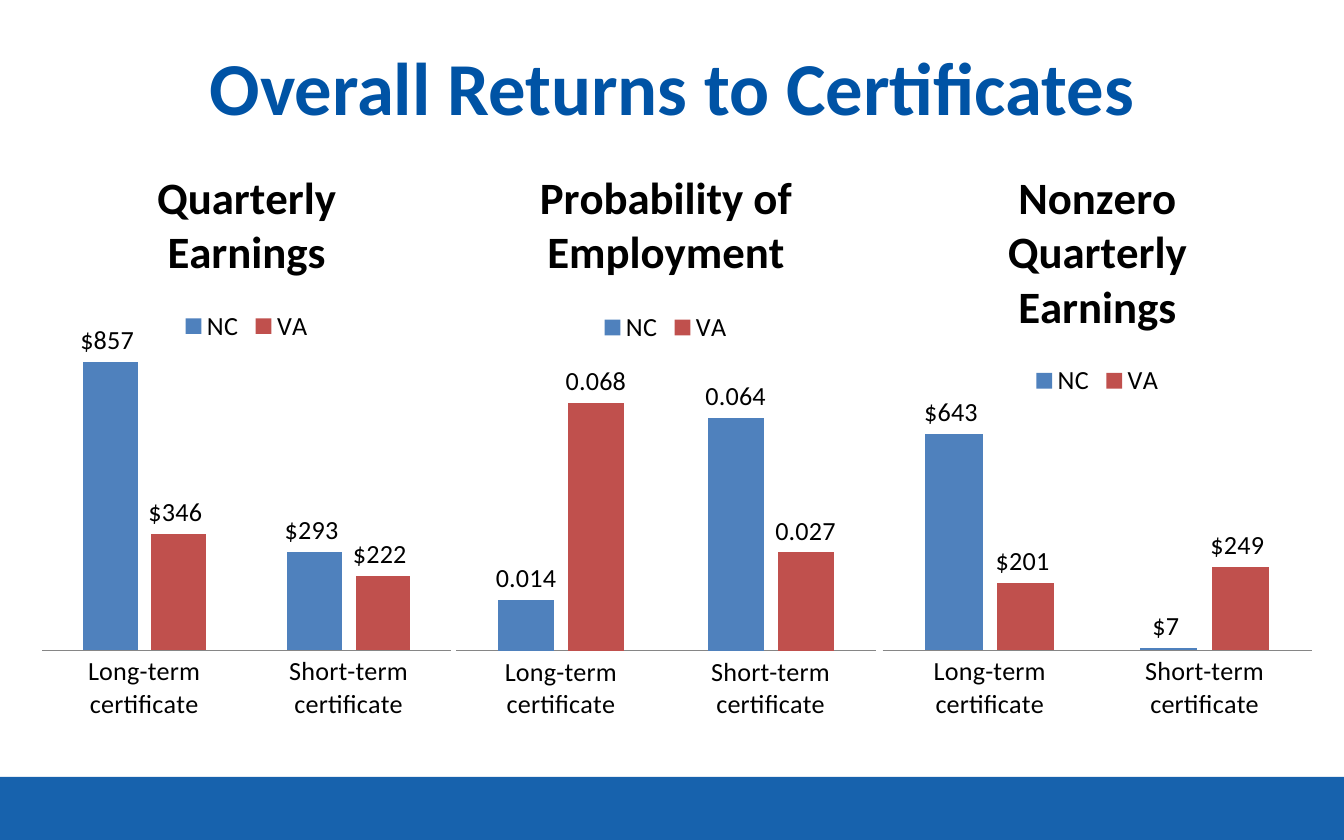
from dataclasses import dataclass
from typing import Optional

from lxml import etree
from pptx import Presentation
from pptx.chart.data import CategoryChartData
from pptx.dml.color import RGBColor
from pptx.enum.chart import XL_CHART_TYPE as ChartType
from pptx.enum.chart import XL_LABEL_POSITION as LabelPos
from pptx.enum.chart import XL_LEGEND_POSITION as LegendPos
from pptx.enum.chart import XL_TICK_MARK as Tick
from pptx.enum.shapes import MSO_SHAPE as Shape
from pptx.enum.text import MSO_ANCHOR as Anchor
from pptx.enum.text import PP_ALIGN as Align
from pptx.oxml.ns import qn
from pptx.util import Inches, Pt

W, H = 10, 6.25
FONT = "Calibri"
COLORS = {"brand": "0053A5", "NC": "4F81BD", "VA": "C0504D",
          "axis": "868686", "text": "000000"}
DOLLARS = '"$"#,##0_);[Red]\\("$"#,##0\\)'
CATEGORIES = ("Long-term certificate", "Short-term certificate")
CHART_TOP, CHART_HEIGHT = 1.04, 4.42
PLOT_LEFT, PLOT_BOTTOM = 0.02, 0.86  # shares of the chart frame


@dataclass
class Panel:
    title: str
    left: float
    width: float
    nc: tuple
    va: tuple
    maximum: float
    number_format: str = DOLLARS
    plot_top: float = 0.35
    legend_at: Optional[tuple] = None


PANELS = (
    Panel("Quarterly Earnings", 0.25, 3.17, (857, 293), (346, 222), 900),
    Panel("Probability of Employment", 3.33, 3.25, (0.014, 0.064),
          (0.068, 0.027), 0.08, "General", 0.37, (0.34, 0.28)),
    Panel("Nonzero Quarterly Earnings", 6.5, 3.33, (643, 7), (201, 249), 900),
)


def rgb(name: str) -> RGBColor:
    return RGBColor.from_string(COLORS[name])


def set_font(font, size: float, color: str = "text", bold: bool = False) -> None:
    values = {"name": FONT, "size": Pt(size), "bold": bold}
    for key, value in values.items():
        setattr(font, key, value)
    font.color.rgb = rgb(color)


def set_layout(parent, after: str, **values) -> None:
    """Place a chart part by shares of the chart frame."""
    for old in parent.findall(qn("c:layout")):
        parent.remove(old)
    layout = etree.Element(qn("c:layout"))
    manual = etree.SubElement(layout, qn("c:manualLayout"))
    for key, value in values.items():
        etree.SubElement(manual, qn(f"c:{key}")).set("val", str(value))
    anchor = parent.find(qn(after)) if after else None
    if anchor is None:
        parent.insert(0, layout)
    else:
        anchor.addnext(layout)


def add_title(s, text: str) -> None:
    sp = s.shapes.title
    frame = {"left": 0.05 * W, "top": 0.12, "width": 0.9 * W, "height": 1.04}
    for key, value in frame.items():
        setattr(sp, key, Inches(value))
    tf = sp.text_frame
    tf.text = text
    tf.vertical_anchor = Anchor.MIDDLE
    p = tf.paragraphs[0]
    p.alignment = Align.CENTER
    set_font(p.runs[0].font, 40, "brand", True)


def add_footer_band(s) -> None:
    height = 0.47
    sp = s.shapes.add_shape(Shape.RECTANGLE, 0, Inches(H - height),
                            Inches(W), Inches(height))
    sp.shadow.inherit = False
    sp.fill.solid()
    sp.fill.fore_color.rgb = rgb("brand")
    sp.line.fill.background()
    color = sp.fill._xPr.find(f".//{qn('a:srgbClr')}")
    etree.SubElement(color, qn("a:alpha")).set("val", "91000")


def add_panel(s, panel: Panel) -> None:
    data = CategoryChartData(number_format=panel.number_format)
    data.categories = CATEGORIES
    data.add_series("NC", panel.nc)
    data.add_series("VA", panel.va)
    chart = s.shapes.add_chart(
        ChartType.COLUMN_CLUSTERED, Inches(panel.left), Inches(CHART_TOP),
        Inches(panel.width), Inches(CHART_HEIGHT), data).chart
    set_font(chart.font, 10)

    chart.has_title = True
    tf = chart.chart_title.text_frame
    tf.text = panel.title
    set_font(tf.paragraphs[0].runs[0].font, 24, bold=True)
    chart.chart_title.include_in_layout = False

    chart.has_legend = True
    legend = chart.legend
    legend.position = LegendPos.TOP
    legend.include_in_layout = False
    set_font(legend.font, 14)
    if panel.legend_at:
        x, y = panel.legend_at
        set_layout(legend._element, "c:legendPos",
                   xMode="edge", yMode="edge", x=x, y=y)

    axis = chart.category_axis
    axis.major_tick_mark = axis.minor_tick_mark = Tick.NONE
    axis.format.line.color.rgb = rgb("axis")
    set_font(axis.tick_labels.font, 14)
    values = {"minimum_scale": 0, "maximum_scale": panel.maximum,
              "has_major_gridlines": False, "visible": False}
    for key, value in values.items():
        setattr(chart.value_axis, key, value)

    plot = chart.plots[0]
    plot.gap_width, plot.overlap = 150, -25
    plot.vary_by_categories = False
    for series in plot.series:
        series.format.fill.solid()
        series.format.fill.fore_color.rgb = rgb(series.name)
        labels = series.data_labels
        label_format = {"show_value": True, "position": LabelPos.OUTSIDE_END,
                        "number_format": panel.number_format,
                        "number_format_is_linked": False}
        for key, value in label_format.items():
            setattr(labels, key, value)
        set_font(labels.font, 14)

    area = chart._chartSpace.find(f".//{qn('c:plotArea')}")
    set_layout(area, "", layoutTarget="inner", xMode="edge", yMode="edge",
               x=PLOT_LEFT, y=panel.plot_top, w=1 - 2 * PLOT_LEFT,
               h=round(PLOT_BOTTOM - panel.plot_top, 2))


def main() -> None:
    prs = Presentation()
    prs.slide_width, prs.slide_height = Inches(W), Inches(H)
    s = prs.slides.add_slide(prs.slide_layouts[5])
    add_footer_band(s)
    add_title(s, "Overall Returns to Certificates")
    for panel in PANELS:
        add_panel(s, panel)
    prs.save("out.pptx")


if __name__ == "__main__":
    main()
